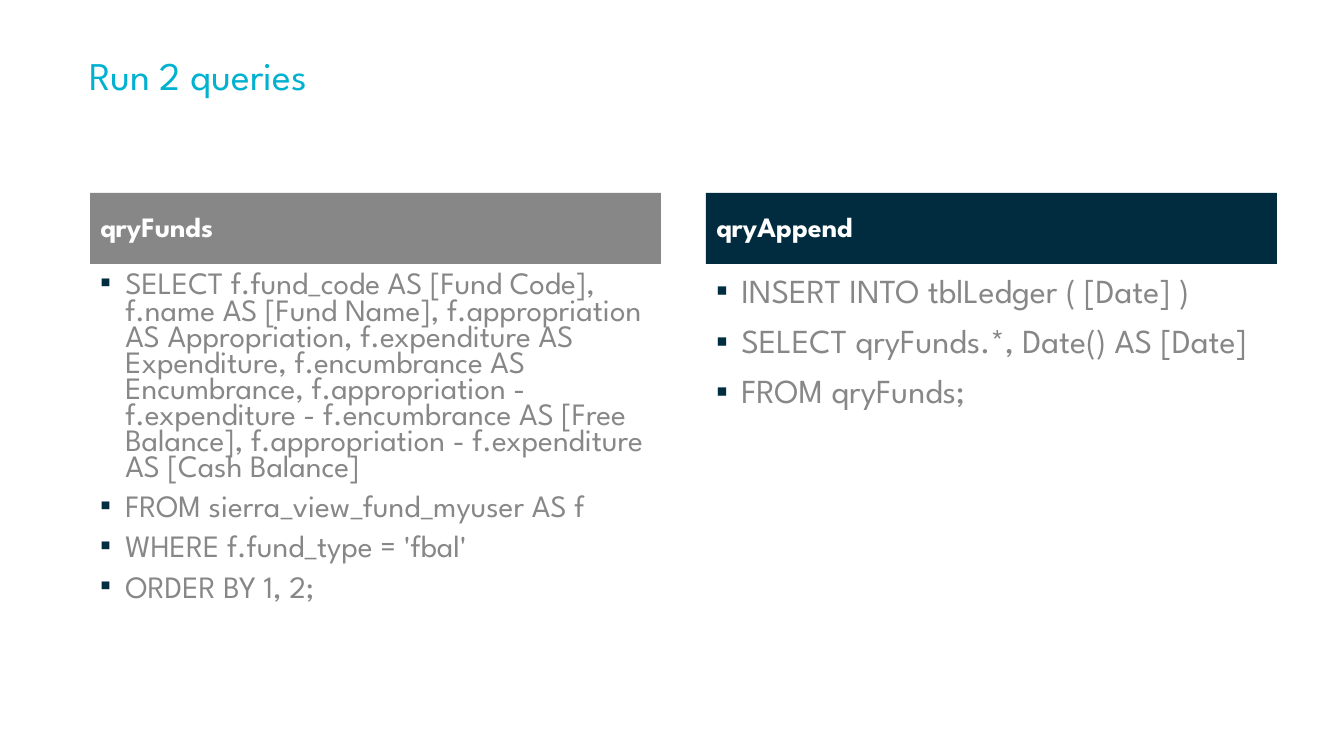
import pptx
import pptx.util
import pptx.dml.color
import pptx.enum.text
from lxml import etree

EMU_PER_PX = 914400 / 100.8
FONT = "League Spartan"
CYAN = pptx.dml.color.RGBColor(0x00, 0xB1, 0xD0)
GRAY = pptx.dml.color.RGBColor(0x87, 0x87, 0x87)
NAVY = pptx.dml.color.RGBColor(0x01, 0x2C, 0x40)
BULLET_NAVY = pptx.dml.color.RGBColor(0x01, 0x2D, 0x40)
WHITE = pptx.dml.color.RGBColor(0xFF, 0xFF, 0xFF)


def px(length):
    return pptx.util.Emu(round(length * EMU_PER_PX))


def fill_placeholder(holder, box, lines, size, color, spacing, bold=False, bullets=False):
    holder.left, holder.top, holder.width, holder.height = map(px, box)
    frame = holder.text_frame
    frame.word_wrap = True
    frame.auto_size = pptx.enum.text.MSO_AUTO_SIZE.NONE
    anchors = pptx.enum.text.MSO_ANCHOR
    frame.vertical_anchor = anchors.TOP if bullets else anchors.MIDDLE
    for index, line in enumerate(lines):
        paragraph = frame.paragraphs[0] if index == 0 else frame.add_paragraph()
        paragraph.text = line
        paragraph.alignment = pptx.enum.text.PP_ALIGN.LEFT
        paragraph.line_spacing = spacing
        paragraph.space_before = pptx.util.Pt(10 if index else 0)
        if bullets:
            properties = paragraph._p.get_or_add_pPr()
            properties.set("marL", str(pptx.util.Inches(0.25)))
            properties.set("indent", str(-pptx.util.Inches(0.25)))
            namespace = "{%s}" % properties.nsmap["a"]
            bullet_color = etree.SubElement(properties, namespace + "buClr")
            etree.SubElement(bullet_color, namespace + "srgbClr", val=str(BULLET_NAVY))
            etree.SubElement(properties, namespace + "buFont", typeface="Arial")
            etree.SubElement(properties, namespace + "buChar", char="▪")
        paragraph.font.name = FONT
        paragraph.font.size = pptx.util.Pt(size)
        paragraph.font.bold = bold
        paragraph.font.color.rgb = color


presentation = pptx.Presentation()
presentation.slide_width = px(1344)
presentation.slide_height = px(756)

# Comparison layout: a title, then a header and a list for each query
slide = presentation.slides.add_slide(presentation.slide_layouts[4])
title, *query_holders = slide.placeholders
fill_placeholder(title, (79, 30, 1199, 96), ["Run 2 queries"], 28, CYAN, 0.9)

# Query name, header color, SQL size, SQL line spacing, SQL clauses
queries = [
    ("qryFunds", GRAY, 22.2, 0.7, [
        "SELECT f.fund_code AS [Fund Code], \n"
        "f.name AS [Fund Name], f.appropriation AS Appropriation, "
        "f.expenditure AS Expenditure, f.encumbrance AS Encumbrance, "
        "f.appropriation - f.expenditure - f.encumbrance AS [Free Balance], "
        "f.appropriation - f.expenditure AS [Cash Balance]",
        "FROM sierra_view_fund_myuser AS f",
        "WHERE f.fund_type = 'fbal'",
        "ORDER BY 1, 2;",
    ]),
    ("qryAppend", NAVY, 24, 0.9, [
        "INSERT INTO tblLedger ( [Date] )",
        "SELECT qryFunds.*, Date() AS [Date]",
        "FROM qryFunds;",
    ]),
]

# Two equal columns
for column, (name, header_color, size, spacing, clauses) in enumerate(queries):
    header, sql = query_holders[2 * column:2 * column + 2]
    left = 90 + 616 * column
    header.fill.solid()
    header.fill.fore_color.rgb = header_color
    fill_placeholder(header, (left, 193, 571, 71), [name], 20, WHITE, 0.9, bold=True)
    fill_placeholder(sql, (left, 269, 571, 395), clauses, size, GRAY, spacing, bullets=True)

presentation.save("out.pptx")
